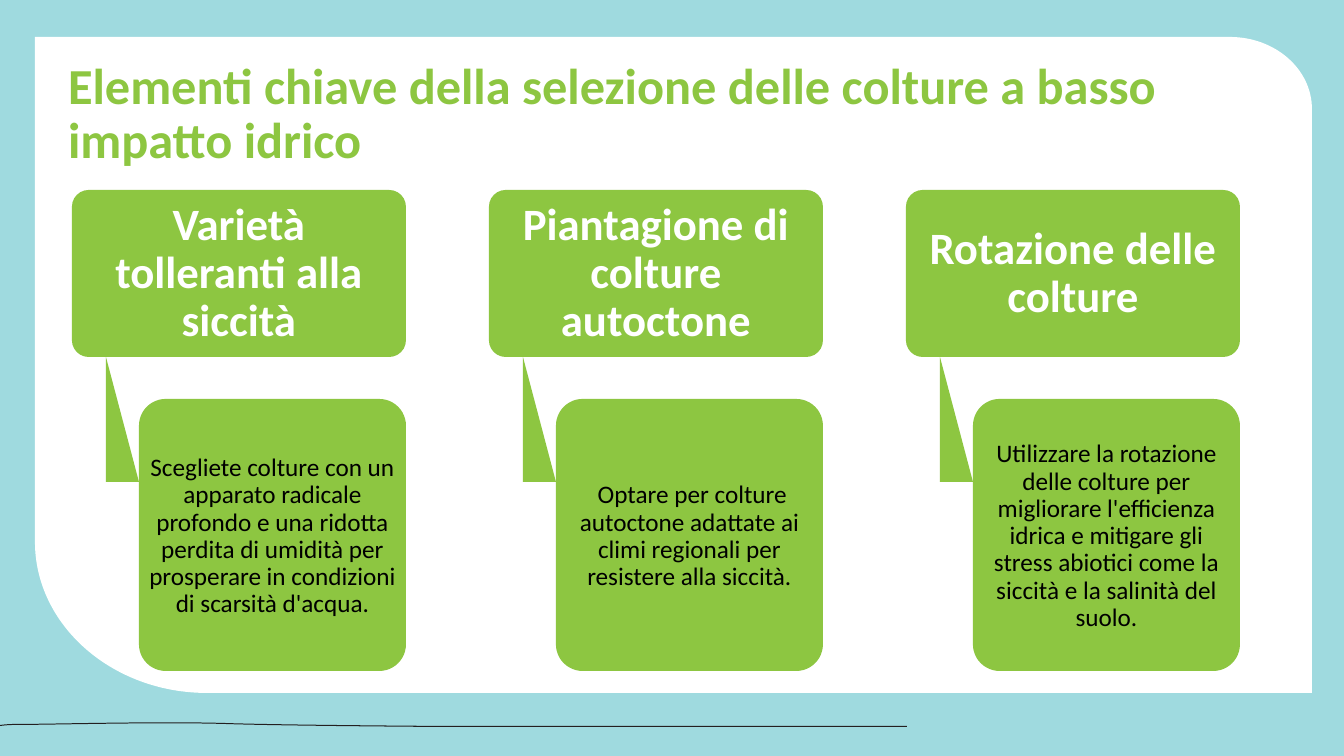
from dataclasses import dataclass

from lxml.etree import SubElement
from pptx import Presentation
from pptx.dml.color import RGBColor
from pptx.enum.shapes import MSO_SHAPE
from pptx.enum.text import MSO_ANCHOR, MSO_AUTO_SIZE, PP_ALIGN
from pptx.oxml.ns import qn
from pptx.util import Emu, Pt

EMU_PER_PX = 914400 / 100.8
TITLE_ONLY = 5


@dataclass(frozen=True)
class Theme:
    font: str = "Calibri"
    teal: str = "9FDADF"
    green: str = "8DC641"
    white: str = "FFFFFF"
    black: str = "000000"
    ink: str = "231F20"
    title_size: int = 36
    heading_size: int = 32
    detail_size: int = 18


THEME = Theme()

TITLE = "Elementi chiave della selezione delle colture a basso impatto idrico"
CROP_CARDS = [
    ("Varietà tolleranti alla siccità",
     "Scegliete colture con un apparato radicale profondo e una ridotta "
     "perdita di umidità per prosperare in condizioni di scarsità d'acqua."),
    ("Piantagione di colture autoctone",
     " Optare per colture autoctone adattate ai climi regionali per "
     "resistere alla siccità."),
    ("Rotazione delle colture",
     "Utilizzare la rotazione delle colture per migliorare l'efficienza "
     "idrica e mitigare gli stress abiotici come la siccità e la salinità "
     "del suolo."),
]

# Outlines: L takes one point, C takes two control points and an end
PANEL_STEPS = "LCLLC"
PANEL = [(35, 37), (1230, 37), (1275, 37), (1312, 69), (1312, 109),
         (1312, 693), (207, 693), (112, 693), (35, 625), (35, 542)]
WAVE_STEPS = "LCCCLCCCL"
WAVE_TOP = [(907, 726), (447, 726), (445, 726), (282, 725), (225, 723),
            (156, 721), (52, 724), (14, 724), (6, 724), (1, 725), (0, 725)]
WAVE_THICKNESS = 1


def px(length):
    return Emu(round(length * EMU_PER_PX))


def paint(shape, color):
    shape.shadow.inherit = False
    shape.fill.solid()
    shape.fill.fore_color.rgb = RGBColor.from_string(color)
    shape.line.fill.background()


def write_text(shape, text, *, size, color, bold=False, align=PP_ALIGN.CENTER,
               anchor=MSO_ANCHOR.MIDDLE, inset_x=0, inset_top=0, inset_bottom=0):
    frame = shape.text_frame
    frame.word_wrap = True
    frame.auto_size = MSO_AUTO_SIZE.NONE
    frame.vertical_anchor = anchor
    frame.margin_left = frame.margin_right = px(inset_x)
    frame.margin_top, frame.margin_bottom = px(inset_top), px(inset_bottom)
    para = frame.paragraphs[0]
    para.alignment = align
    para.line_spacing = 0.9
    span = para.add_run()
    span.text = text
    span.font.name = THEME.font
    span.font.size = Pt(size)
    span.font.bold = bold
    span.font.color.rgb = RGBColor.from_string(color)


def add_outline(page, points, steps, color):
    corners = [(px(x), px(y)) for x, y in points]
    builder = page.shapes.build_freeform(*corners[0], scale=1.0)
    builder.add_line_segments(corners[1:], close=True)
    outline = builder.convert_to_shape()
    paint(outline, color)

    # Join three line ends into one curve wherever a step is C
    lines = iter(list(outline.element.iter(qn("a:lnTo"))))
    for step in steps:
        line = next(lines)
        if step == "C":
            curve = SubElement(line.getparent(), qn("a:cubicBezTo"))
            line.addprevious(curve)
            for part in (line, next(lines), next(lines)):
                curve.append(part[0])
                part.getparent().remove(part)


def add_box(page, preset, left, top, width, height, color):
    box = page.shapes.add_shape(preset, px(left), px(top), px(width), px(height))
    paint(box, color)
    return box


def add_rounded_box(page, left, top, width, height):
    box = add_box(page, MSO_SHAPE.ROUNDED_RECTANGLE, left, top, width, height,
                  THEME.green)
    box.adjustments[0] = 0.1
    return box


def add_backdrop(page):
    add_box(page, MSO_SHAPE.RECTANGLE, 0, 0, 1344, 756, THEME.teal)
    # White panel with two rounded corners
    add_outline(page, PANEL, PANEL_STEPS, THEME.white)
    # Thin wave along the bottom
    underside = [(x, y + WAVE_THICKNESS) for x, y in reversed(WAVE_TOP)]
    add_outline(page, WAVE_TOP + underside, WAVE_STEPS, THEME.ink)


def add_title(page):
    title = page.shapes.title
    title.left, title.top, title.width, title.height = map(px, (58, 56, 1168, 89))
    write_text(title, TITLE, size=THEME.title_size, color=THEME.green, bold=True,
               align=PP_ALIGN.LEFT, anchor=MSO_ANCHOR.TOP,
               inset_x=10, inset_top=5, inset_bottom=5)
    # Bring the title in front of the panel
    page.shapes.element.append(title.element)


def add_crop_card(page, left, heading, detail):
    heading_box = add_rounded_box(page, left, 190, 334, 167)
    write_text(heading_box, heading, size=THEME.heading_size, color=THEME.white,
               bold=True, inset_x=7, inset_top=5, inset_bottom=4)

    # Wedge from heading to detail
    wedge = [(left + 34, 357), (left + 34, 482), (left + 67, 482)]
    add_outline(page, wedge, "LL", THEME.green)

    detail_box = add_rounded_box(page, left + 67, 399, 267, 272)
    write_text(detail_box, detail, size=THEME.detail_size, color=THEME.black,
               inset_x=1, inset_top=5, inset_bottom=2)


def main():
    deck = Presentation()
    deck.slide_width, deck.slide_height = px(1344), px(756)
    page = deck.slides.add_slide(deck.slide_layouts[TITLE_ONLY])
    add_backdrop(page)
    add_title(page)
    for column, (heading, detail) in enumerate(CROP_CARDS):
        add_crop_card(page, 72 + 417 * column, heading, detail)
    deck.save("out.pptx")


if __name__ == "__main__":
    main()
